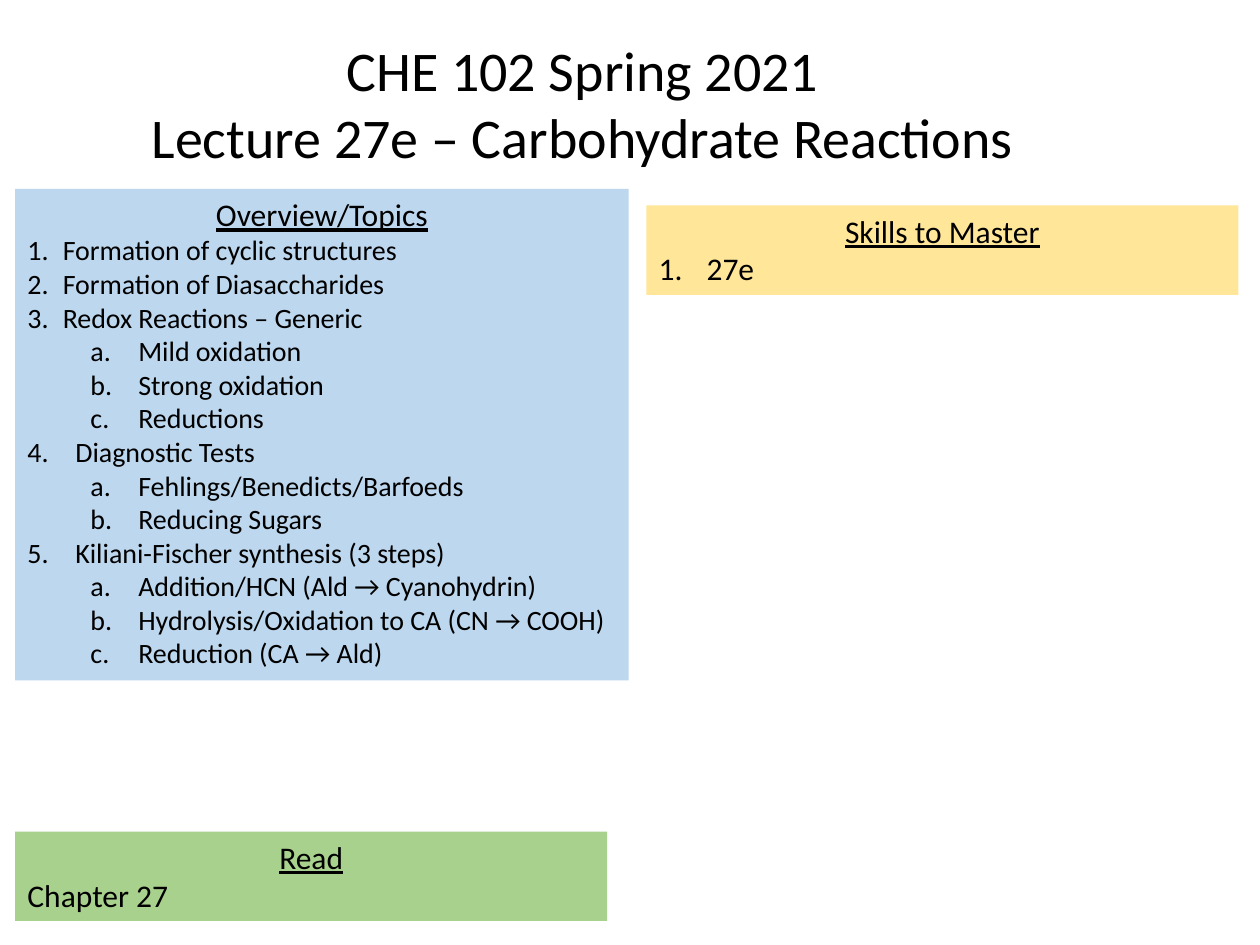
from lxml import etree
from pptx import Presentation
from pptx.dml.color import RGBColor
from pptx.enum.shapes import MSO_SHAPE
from pptx.enum.text import MSO_ANCHOR, MSO_AUTO_SIZE, PP_ALIGN
from pptx.oxml.ns import qn
from pptx.util import Inches, Pt

RECTANGLE = MSO_SHAPE.RECTANGLE
TOP = MSO_ANCHOR.TOP
GROW = MSO_AUTO_SIZE.SHAPE_TO_FIT_TEXT
LEFT, CENTER = PP_ALIGN.LEFT, PP_ALIGN.CENTER

BLACK = RGBColor(0x00, 0x00, 0x00)
BLUE = RGBColor(0xBD, 0xD7, 0xEE)
YELLOW = RGBColor(0xFF, 0xE6, 0x99)
GREEN = RGBColor(0xA9, 0xD1, 0x8E)

TITLE = ["CHE 102 Spring 2021", "Lecture 27e – Carbohydrate Reactions"]
TITLE_AREA = (1.07, 0.23, 7.11, 1.18)

LIST_STYLES = {
    "narrow": (0, 0.28, 0.28, "arabicPeriod"),
    "wide": (0, 0.38, 0.38, "arabicPeriod"),
    "sub": (1, 0.88, 0.38, "alphaLcPeriod"),
}

TOPICS = [
    ("narrow", "Formation of cyclic structures"),
    ("narrow", "Formation of Diasaccharides"),
    ("narrow", "Redox Reactions – Generic"),
    ("sub", "Mild oxidation"),
    ("sub", "Strong oxidation"),
    ("sub", "Reductions"),
    ("wide", "Diagnostic Tests"),
    ("sub", "Fehlings/Benedicts/Barfoeds"),
    ("sub", "Reducing Sugars"),
    ("wide", "Kiliani-Fischer synthesis (3 steps)"),
    ("sub", "Addition/HCN (Ald → Cyanohydrin)"),
    ("sub", "Hydrolysis/Oxidation to CA (CN → COOH)"),
    ("sub", "Reduction (CA → Ald)"),
]

PANELS = [
    ((0.12, 1.5, 4.87, 3.9), BLUE, "Overview/Topics", 16, TOPICS),
    ((5.13, 1.63, 4.7, 0.71), YELLOW, "Skills to Master", 18, [("wide", "27e")]),
    ((0.12, 6.6, 4.7, 0.71), GREEN, "Read", 18, [(None, "Chapter 27")]),
]


def add_line(frame, index, text, size, align=LEFT, underline=False):
    para = frame.paragraphs[0] if index == 0 else frame.add_paragraph()
    para.alignment = align
    span = para.add_run()
    span.text = text
    span.font.color.rgb = BLACK
    formats = {"name": "Calibri", "size": Pt(size), "underline": underline}
    for name, value in formats.items():
        setattr(span.font, name, value)
    return para


def number_line(para, style):
    level, margin, hanging, numbering = LIST_STYLES[style]
    para.level = level
    properties = para._p.get_or_add_pPr()
    properties.set("marL", str(Inches(margin)))
    properties.set("indent", str(-Inches(hanging)))
    etree.SubElement(properties, qn("a:buFont"), typeface="+mj-lt")
    etree.SubElement(properties, qn("a:buAutoNum"), type=numbering)


def add_panel(page, area, color, heading, size, lines):
    box = page.shapes.add_shape(RECTANGLE, *map(Inches, area))
    box.shadow.inherit = False
    box.fill.solid()
    box.fill.fore_color.rgb = color
    box.line.fill.background()
    frame = box.text_frame
    frame.word_wrap = True
    frame.auto_size = GROW
    frame.vertical_anchor = TOP
    add_line(frame, 0, heading, 18, CENTER, True)
    for index, (style, text) in enumerate(lines, 1):
        para = add_line(frame, index, text, size)
        if style:
            number_line(para, style)


def add_title(page):
    frame = page.shapes.add_textbox(*map(Inches, TITLE_AREA)).text_frame
    frame.word_wrap = False
    frame.auto_size = GROW
    for index, text in enumerate(TITLE):
        add_line(frame, index, text, 32, CENTER)


def main():
    deck = Presentation()
    deck.slide_width, deck.slide_height = Inches(10), Inches(7.5)
    page = deck.slides.add_slide(deck.slide_layouts[6])
    for panel in PANELS:
        add_panel(page, *panel)
    add_title(page)
    deck.save("out.pptx")


if __name__ == "__main__":
    main()
